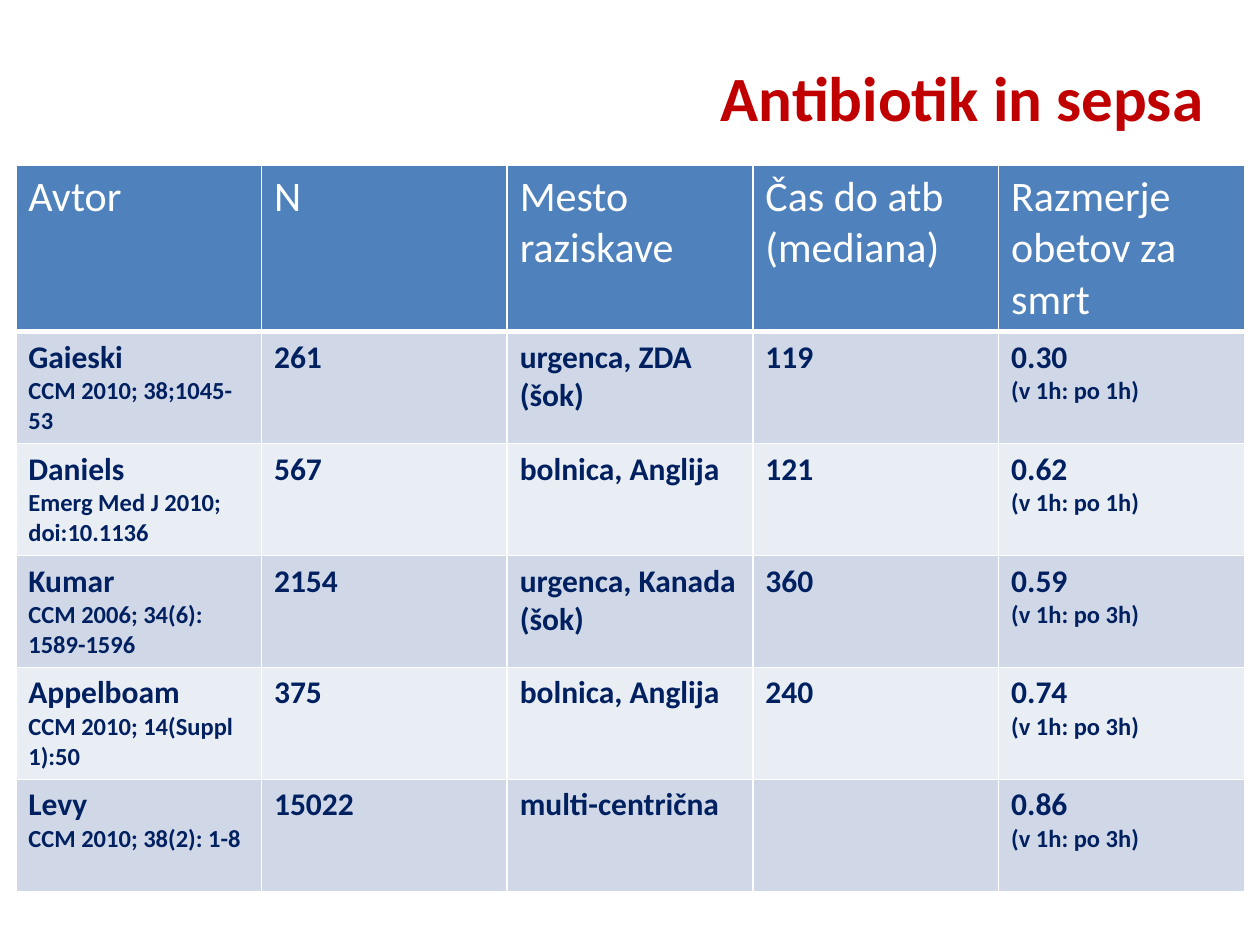
from dataclasses import dataclass

from lxml import etree
from pptx import Presentation
from pptx.dml.color import RGBColor
from pptx.enum import text as tx
from pptx.oxml import ns
from pptx.util import Pt

FONT = "Calibri"
WHITE, RED, NAVY, BLUE = "FFFFFF", "C00000", "002060", "4F81BD"
BANDS = ("D0D8E8", "E9EDF4")
HEADS = ("Avtor", "N", "Mesto raziskave", "Čas do atb\n(mediana)", "Razmerje obetov za smrt")
EDGES = {"lnL": 1, "lnR": 1, "lnT": 1, "lnB": 3}


@dataclass
class Study:
    author: str
    source: str
    count: str
    place: str
    time: str
    odds: str
    hours: int


STUDIES = (
    Study("Gaieski", "CCM 2010; 38;1045-53", "261", "urgenca, ZDA\n(šok)", "119", "0.30", 1),
    Study("Daniels", "Emerg Med J 2010; doi:10.1136", "567", "bolnica, Anglija", "121", "0.62", 1),
    Study("Kumar", "CCM 2006; 34(6): 1589-1596", "2154", "urgenca, Kanada\n(šok)", "360", "0.59", 3),
    Study("Appelboam", "CCM 2010; 14(Suppl 1):50", "375", "bolnica, Anglija", "240", "0.74", 3),
    Study("Levy", "CCM 2010; 38(2): 1-8", "15022", "multi-centrična", "", "0.86", 3),
)


def paint(target, color: str) -> None:
    target.rgb = RGBColor.from_string(color)


def style(para, size: float, color: str, bold: bool) -> None:
    for run in para.runs:
        run.font.name = FONT
        run.font.size = Pt(size)
        run.font.bold = bold
        paint(run.font.color, color)


def fill_cell(cell, words: str, fill: str, color: str, sizes: tuple, bold: bool) -> None:
    cell.fill.solid()
    paint(cell.fill.fore_color, fill)
    if not words:
        return
    cell.text_frame.text = words
    for row, para in enumerate(cell.text_frame.paragraphs):
        style(para, sizes[min(row, len(sizes) - 1)], color, bold)


def edge_cell(cell) -> None:
    props = cell._tc.get_or_add_tcPr()
    for tag, width in EDGES.items():
        line = etree.SubElement(props, ns.qn(f"a:{tag}"), w=str(Pt(width)))
        solid = etree.SubElement(line, ns.qn("a:solidFill"))
        etree.SubElement(solid, ns.qn("a:srgbClr"), val=WHITE)


def add_grid(slide) -> None:
    wide, head, tall = 140.4, 94, 64
    count = len(STUDIES)
    grid = slide.shapes.add_table(
        count + 1, len(HEADS), Pt(9), Pt(94.5), Pt(wide * len(HEADS)), Pt(head + tall * count)
    ).table
    for col in grid.columns:
        col.width = Pt(wide)
    for index, row in enumerate(grid.rows):
        row.height = Pt(tall if index else head)
    for col, words in enumerate(HEADS):
        edge_cell(grid.cell(0, col))
        fill_cell(grid.cell(0, col), words, BLUE, WHITE, (24,), False)
    for row, study in enumerate(STUDIES):
        values = (
            (f"{study.author}\n{study.source}", (18, 14)),
            (study.count, (18,)),
            (study.place, (18,)),
            (study.time, (18,)),
            (f"{study.odds}\n(v 1h: po {study.hours}h)", (18, 14)),
        )
        for col, (words, sizes) in enumerate(values):
            fill_cell(grid.cell(row + 1, col), words, BANDS[row % 2], NAVY, sizes, True)


def set_title(slide, words: str) -> None:
    title = slide.shapes.title
    title.left, title.top, title.width, title.height = Pt(76.5), Pt(0), Pt(618.5), Pt(110)
    frame = title.text_frame
    frame.text = words
    frame.word_wrap = True
    frame.vertical_anchor = tx.MSO_ANCHOR.MIDDLE
    para = frame.paragraphs[0]
    para.alignment = tx.PP_ALIGN.RIGHT
    style(para, 36, RED, True)
    title.element.getparent().append(title.element)


def main() -> None:
    deck = Presentation()
    deck.slide_width, deck.slide_height = Pt(720), Pt(540)
    slide = deck.slides.add_slide(deck.slide_layouts[5])
    add_grid(slide)
    set_title(slide, "Antibiotik in sepsa")
    deck.save("out.pptx")


if __name__ == "__main__":
    main()
